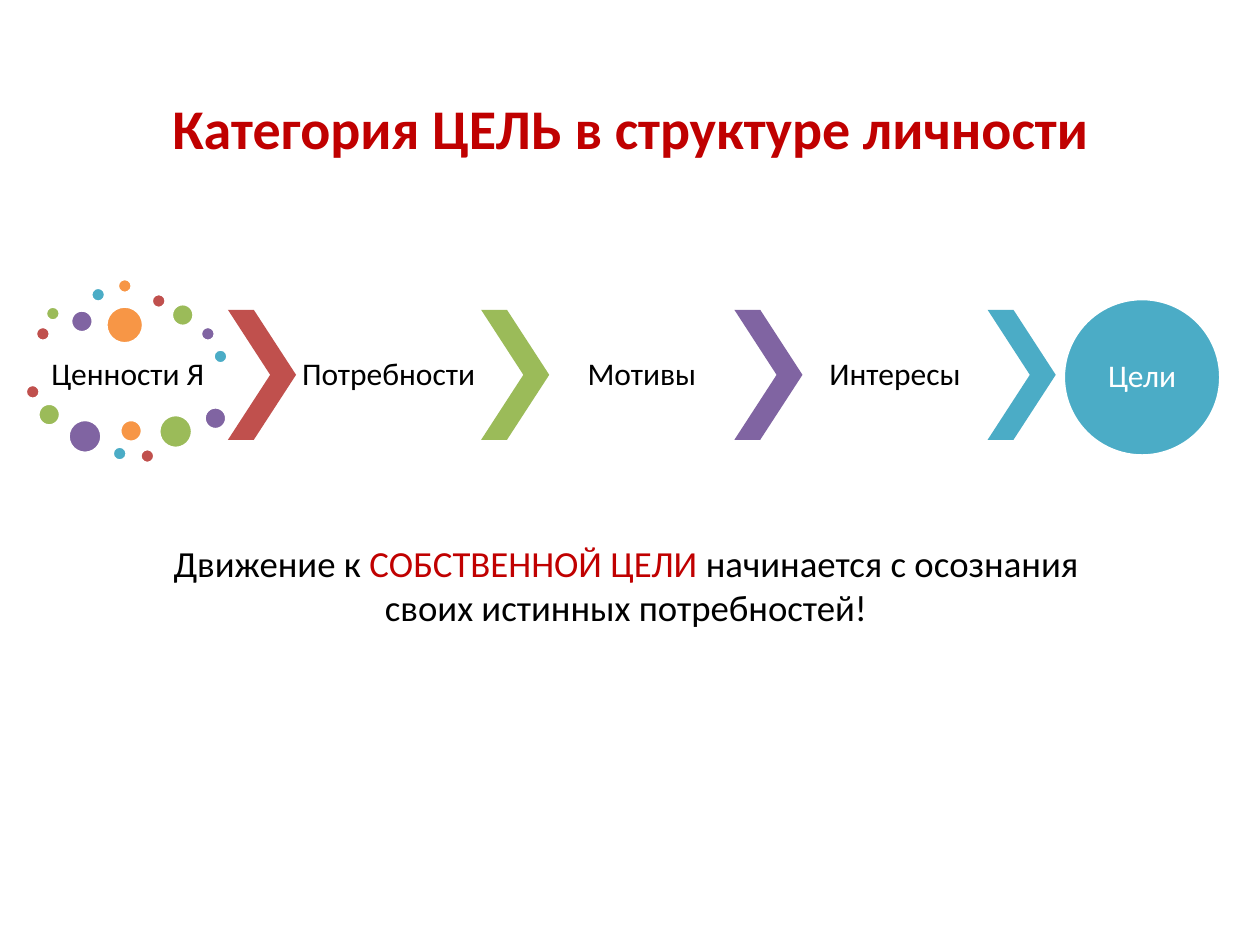
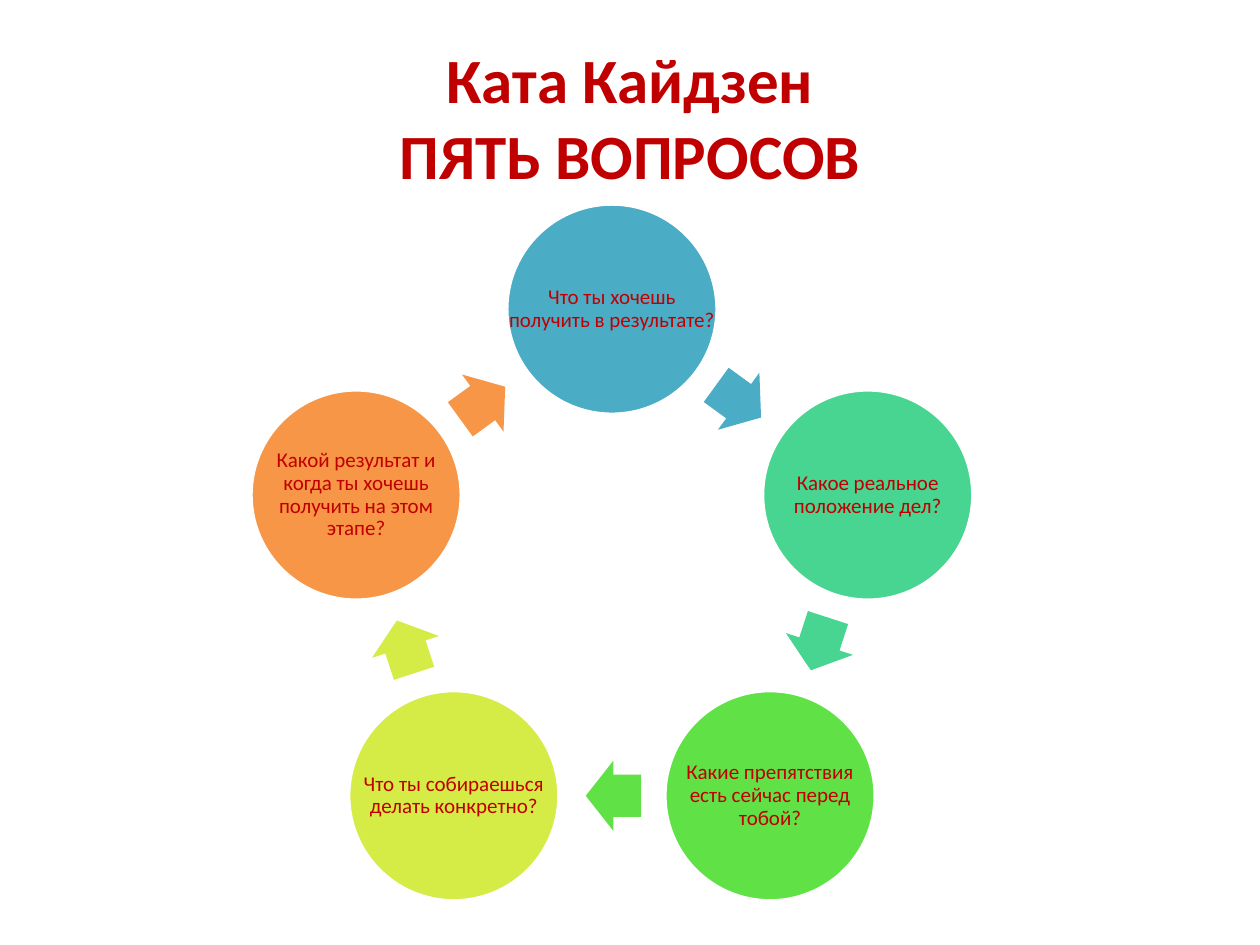
import math
from itertools import cycle

from pptx import Presentation
from pptx.dml.color import RGBColor
from pptx.enum import shapes, text
from pptx.util import Pt

FONT = "Calibri"
BLACK = RGBColor(0x00, 0x00, 0x00)
WHITE = RGBColor(0xFF, 0xFF, 0xFF)
CRIMSON = RGBColor(0xC0, 0x00, 0x00)
RED = RGBColor(0xC0, 0x50, 0x4D)
GREEN = RGBColor(0x9B, 0xBB, 0x59)
PURPLE = RGBColor(0x80, 0x64, 0xA2)
TEAL = RGBColor(0x4B, 0xAC, 0xC6)
ORANGE = RGBColor(0xF7, 0x96, 0x46)
MINT = RGBColor(0x48, 0xD4, 0x91)
LIME = RGBColor(0x60, 0xE1, 0x46)
YELLOW = RGBColor(0xD5, 0xEC, 0x46)

SMALL, MEDIUM, LARGE, HUGE = 8.6, 13, 19.4, 21.6
# left, top (within the cluster) and diameter; colours follow in a cycle
VALUE_DOTS = [
    (5.8, 27.4, SMALL), (11.5, 15.8, SMALL), (25.9, 18, MEDIUM),
    (37.4, 5, SMALL), (52.6, 0, SMALL), (72, 8.6, SMALL),
    (83.5, 14.4, MEDIUM), (100.1, 27.4, SMALL), (107.3, 40.3, SMALL),
    (46.1, 15.8, HUGE), (0, 60.5, SMALL), (7.2, 71.3, MEDIUM),
    (24.5, 80.6, LARGE), (49.7, 95.8, SMALL), (54, 80.6, MEDIUM),
    (65.5, 97.2, SMALL), (76.3, 77.8, LARGE), (102.2, 73.4, MEDIUM),
]
STAGES = [("Потребности", RED), ("Мотивы", GREEN), ("Интересы", PURPLE), (None, TEAL)]
QUESTIONS = [
    ("Что ты хочешь получить в результате?", TEAL),
    ("Какое реальное положение дел?", MINT),
    ("Какие препятствия есть сейчас перед тобой?", LIME),
    ("Что ты собираешься делать конкретно?", YELLOW),
    ("Какой результат и когда ты хочешь получить на этом этапе?", ORANGE),
]


def add_text(slide, box, lines, size, bold=False, inset=2, spacing=None,
             anchor=text.MSO_ANCHOR.MIDDLE):
    """Centred text; lines is a list of lines, each a list of (words, colour) runs."""
    frame = slide.shapes.add_textbox(*map(Pt, box)).text_frame
    frame.word_wrap = True
    frame.vertical_anchor = anchor
    frame.margin_left = frame.margin_right = Pt(inset)
    frame.margin_top = frame.margin_bottom = Pt(inset)
    paragraph = frame.paragraphs[0]
    paragraph.alignment = text.PP_ALIGN.CENTER
    paragraph.line_spacing = spacing
    paragraph.font.size = Pt(size)
    for index, line in enumerate(lines):
        if index:
            paragraph.add_line_break()
        for words, colour in line:
            run = paragraph.add_run()
            run.text = words
            run.font.name = FONT
            run.font.size = Pt(size)
            run.font.bold = bold
            run.font.color.rgb = colour


def add_title(slide, box, lines, size):
    add_text(slide, box, [[(line, CRIMSON)] for line in lines], size, bold=True, inset=4)


def add_label(slide, box, words, colour, size=18, inset=2):
    add_text(slide, box, [[(words, colour)]], size, inset=inset, spacing=0.9)


def add_figure(slide, kind, box, fill, outline=None):
    figure = slide.shapes.add_shape(kind, *map(Pt, box))
    figure.shadow.inherit = False
    figure.fill.solid()
    figure.fill.fore_color.rgb = fill
    if outline is None:
        figure.line.fill.background()
    else:
        figure.line.color.rgb = outline
        figure.line.width = Pt(2)
    return figure


def add_disc(slide, left, top, diameter, fill):
    add_figure(slide, shapes.MSO_SHAPE.OVAL, (left, top, diameter, diameter), fill, WHITE)


def add_values_cluster(slide, left, top):
    add_label(slide, (left + 5.8, top + 38.2, 105.8, 34.6), "Ценности Я", BLACK)
    colours = cycle([RED, GREEN, PURPLE, TEAL, ORANGE])
    for (x, y, diameter), colour in zip(VALUE_DOTS, colours):
        add_disc(slide, left + x, top + y, diameter, colour)


def add_stage_chain(slide, left, top, height):
    """Chevrons with a stage name after each, closed by the goal disc."""
    chevron_width, label_width = 38.9, 105.8
    for index, (stage, colour) in enumerate(STAGES):
        x = left + index * (chevron_width + label_width)
        chevron = add_figure(slide, shapes.MSO_SHAPE.CHEVRON,
                             (x, top, chevron_width, height), colour)
        chevron.adjustments[0] = 0.62
        x += chevron_width
        if stage:
            add_label(slide, (x, top, label_width, height), stage, BLACK)
    goal = (x + 4.3, top - 6.5, 90, 90)
    add_disc(slide, *goal[:3], TEAL)
    add_label(slide, goal, "Цели", WHITE, inset=0)


def add_question_cycle(slide, centre_x, centre_y, radius):
    """Discs on a ring, clockwise from the top, with an arrow midway between each two."""
    diameter, arrow_length, arrow_width = 120.2, 31.7, 40.3
    step = 360 / len(QUESTIONS)
    arrow_radius = radius * math.cos(math.radians(step / 2))

    def on_ring(angle, ring_radius, width, height):
        turn = math.radians(angle)
        return (centre_x + ring_radius * math.sin(turn) - width / 2,
                centre_y - ring_radius * math.cos(turn) - height / 2, width, height)

    for index, (question, colour) in enumerate(QUESTIONS):
        angle = index * step
        disc = on_ring(angle, radius, diameter, diameter)
        add_disc(slide, *disc[:3], colour)
        add_label(slide, disc, question, CRIMSON, size=12, inset=1)
        heading = angle + step / 2
        arrow = add_figure(slide, shapes.MSO_SHAPE.RIGHT_ARROW,
                           on_ring(heading - 0.4, arrow_radius, arrow_length, arrow_width),
                           colour)
        arrow.adjustments[0] = 0.6
        arrow.adjustments[1] = 0.5
        arrow.rotation = heading


def build_goal_slide(slide):
    add_values_cluster(slide, 14.4, 159.1)
    add_stage_chain(slide, 130.3, 177.1, 74.2)
    add_text(slide, (80.6, 306, 554.4, 56), [[
        ("Движение к ", BLACK),
        ("СОБСТВЕННОЙ ЦЕЛИ ", CRIMSON),
        ("начинается с осознания своих истинных потребностей!", BLACK),
    ]], 21, inset=3, anchor=text.MSO_ANCHOR.TOP)
    add_title(slide, (88.6, 49.7, 543.6, 46), ["Категория ЦЕЛЬ в структуре личности"], 32)


def build_questions_slide(slide):
    add_title(slide, (36, 21.6, 648, 90), ["Ката Кайдзен", "ПЯТЬ ВОПРОСОВ"], 36)
    add_question_cycle(slide, 349.7, 330.4, 153.7)


def main():
    deck = Presentation()
    deck.slide_width, deck.slide_height = Pt(720), Pt(540)
    blank = deck.slide_layouts[6]
    for build in (build_goal_slide, build_questions_slide):
        build(deck.slides.add_slide(blank))
    deck.save("out.pptx")


if __name__ == "__main__":
    main()
